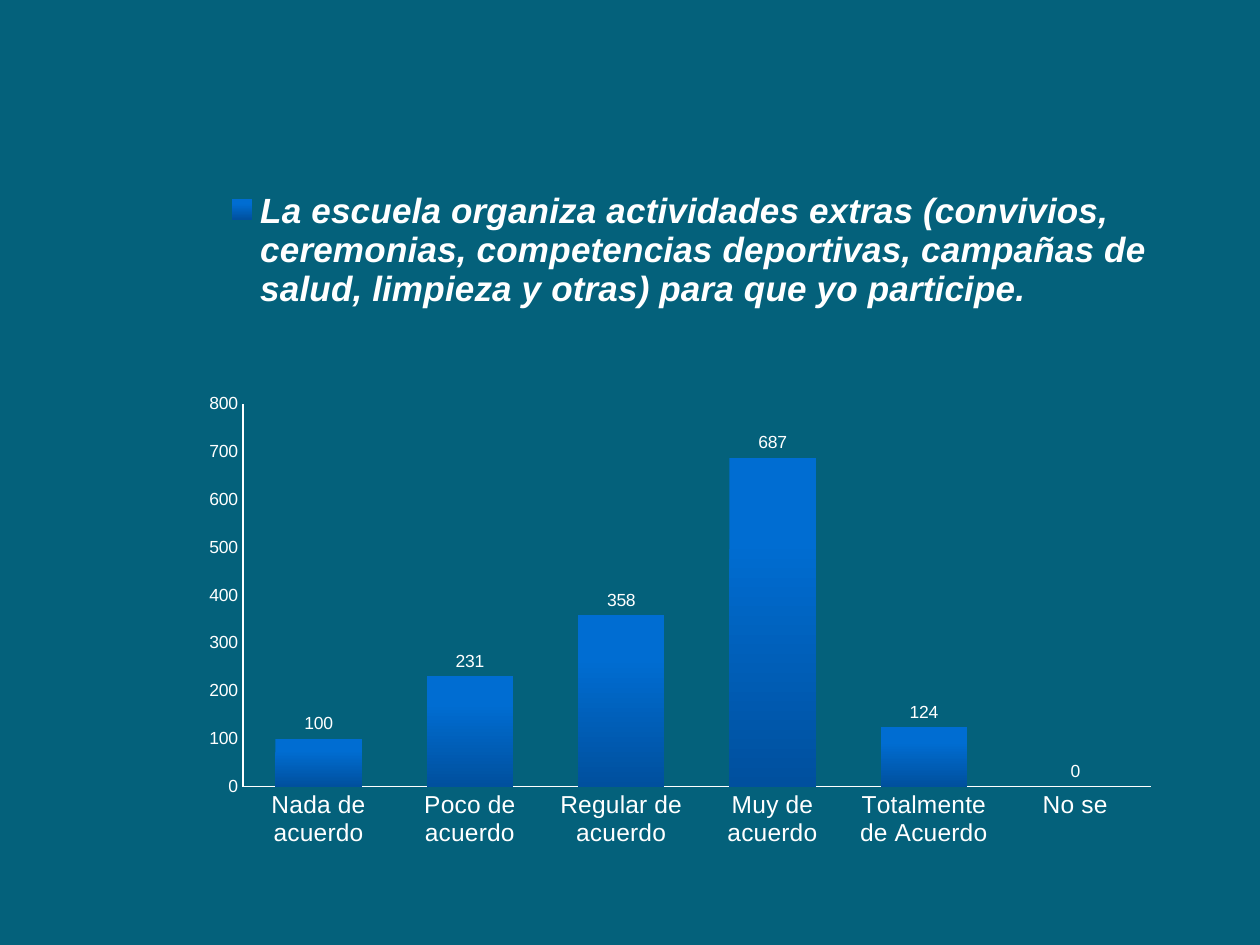
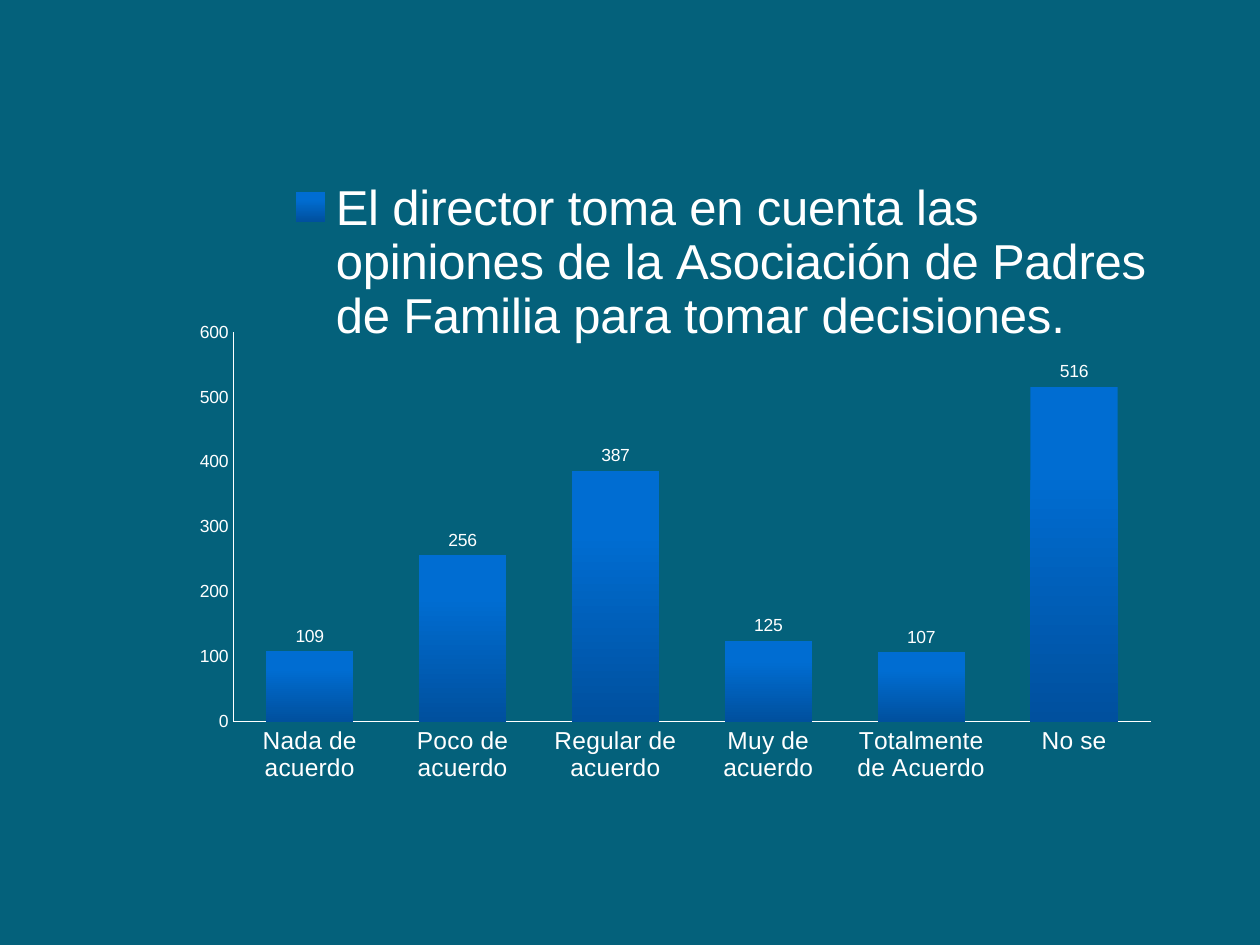
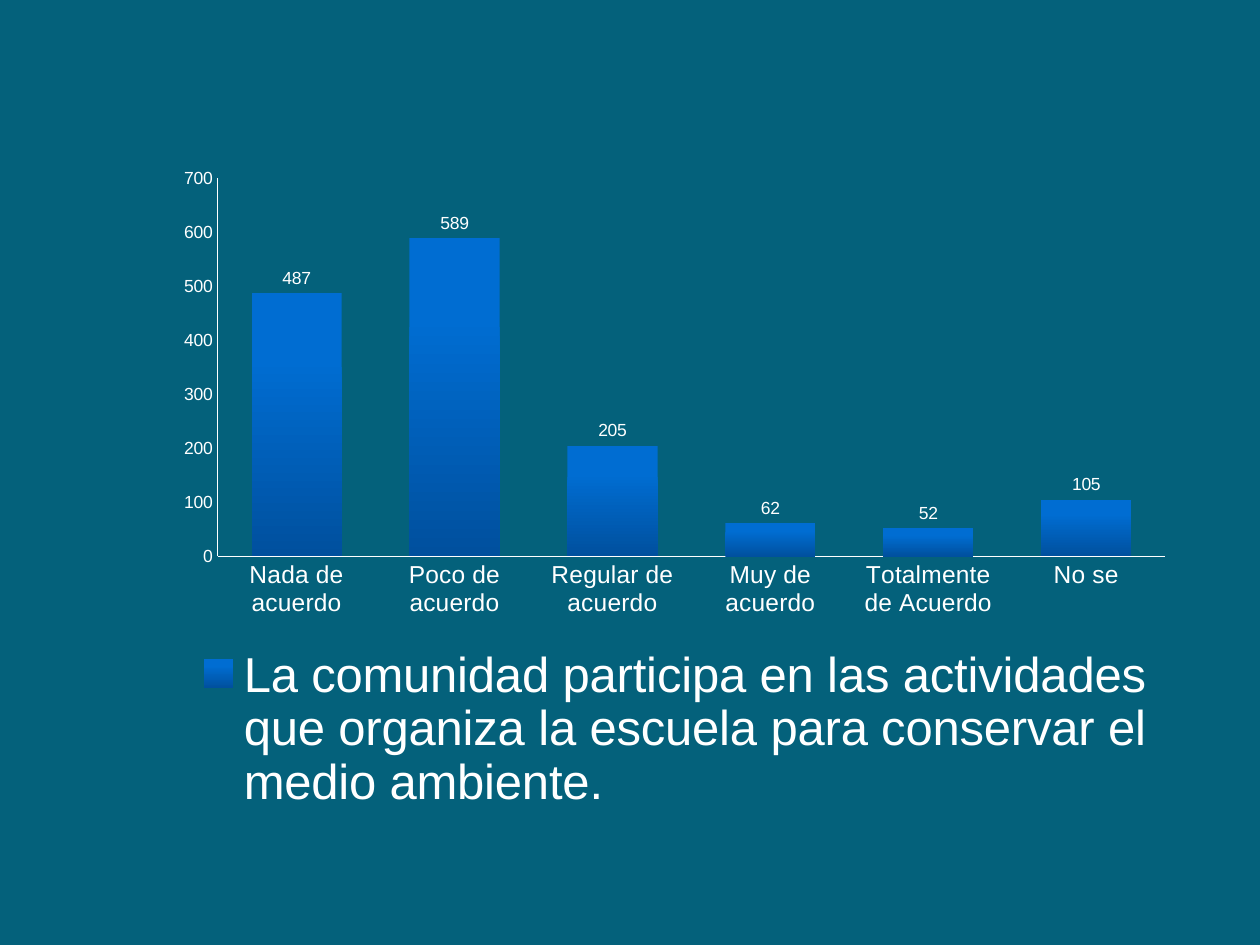
from dataclasses import dataclass

from lxml.etree import SubElement, Element
from pptx import Presentation
from pptx.chart.data import CategoryChartData as ChartData
from pptx.dml.color import RGBColor as Color
from pptx.enum.chart import XL_CHART_TYPE as ChartType
from pptx.enum.chart import XL_LABEL_POSITION as LabelPosition
from pptx.enum.chart import XL_LEGEND_POSITION as LegendPosition
from pptx.enum.chart import XL_TICK_MARK as TickMark
from pptx.oxml.ns import qn
from pptx.util import Inches, Pt


@dataclass(frozen=True)
class Theme:
    font: str = "Arial"
    background: Color = Color.from_string("04617B")
    text: Color = Color.from_string("FFFFFF")
    bar_top: Color = Color.from_string("006DD2")
    bar_bottom: Color = Color.from_string("00509E")
    value_size: int = 10
    category_size: int = 14
    legend_size: int = 28
    emphasis_size: int = 20
    axis_width: float = 0.75


ANSWERS = (
    "Nada de acuerdo",
    "Poco de acuerdo",
    "Regular de acuerdo",
    "Muy de acuerdo",
    "Totalmente de Acuerdo",
    "No se",
)

QUESTIONS = (
    dict(
        question="La escuela organiza actividades extras (convivios, ceremonias, "
        "competencias deportivas, campañas de salud, limpieza y otras) "
        "para que yo participe.",
        votes=(100, 231, 358, 687, 124, 0),
        frame=(1.46, 1.23, 7.8, 5.59),
        plot_area=(0.06, 0.353, 0.924, 0.544),
        legend_area=(0.044, 0.041, 0.94, 0.19),
        emphasis=True,
    ),
    dict(
        question="El director toma en cuenta las opiniones de la Asociación "
        "de Padres de Familia para tomar decisiones.",
        votes=(109, 256, 387, 125, 107, 516),
        frame=(1.38, 1.15, 7.87, 5.35),
        plot_area=(0.06, 0.278, 0.925, 0.578),
        legend_area=(0.109, 0.042, 0.885, 0.267),
    ),
    dict(
        question="La comunidad participa en las actividades que organiza "
        "la escuela para conservar el medio ambiente.",
        votes=(487, 589, 205, 62, 52, 105),
        frame=(1.3, 1.23, 8.11, 5.28),
    ),
)


def manual_layout(area, inner=False):
    layout = Element(qn("c:layout"))
    manual = SubElement(layout, qn("c:manualLayout"))
    settings = [("layoutTarget", "inner")] if inner else []
    settings += [("xMode", "edge"), ("yMode", "edge")]
    settings += zip("xywh", area)
    for name, value in settings:
        SubElement(manual, qn(f"c:{name}")).set("val", str(value))
    return layout


class SurveyDeck:
    def __init__(self, theme):
        self.theme = theme
        self.deck = Presentation()
        self.deck.slide_width = Inches(10)
        self.deck.slide_height = Inches(7.5)
        self.page = None

    def add_page(self):
        self.page = self.deck.slides.add_slide(self.deck.slide_layouts[6])
        fill = self.page.background.fill
        fill.solid()
        fill.fore_color.rgb = self.theme.background

    def style_font(self, font, size, bold=False, italic=False):
        font.name = self.theme.font
        font.size = Pt(size)
        font.bold = bold
        font.italic = italic
        font.color.rgb = self.theme.text

    def style_axis(self, axis, size):
        axis.has_major_gridlines = False
        axis.major_tick_mark = TickMark.NONE
        axis.minor_tick_mark = TickMark.NONE
        axis.format.line.color.rgb = self.theme.text
        axis.format.line.width = Pt(self.theme.axis_width)
        self.style_font(axis.tick_labels.font, size)

    def style_bars(self, plot):
        plot.gap_width = 75
        plot.vary_by_categories = False
        fill = plot.series[0].format.fill
        fill.gradient()
        fill.gradient_angle = 270
        top, bottom = fill.gradient_stops
        top.color.rgb, top.position = self.theme.bar_top, 0.25
        bottom.color.rgb, bottom.position = self.theme.bar_bottom, 1
        plot.has_data_labels = True
        labels = plot.data_labels
        labels.show_value = True
        labels.position = LabelPosition.OUTSIDE_END
        self.style_font(labels.font, self.theme.value_size)

    def add_legend(self, chart, area, emphasis):
        chart.has_legend = True
        legend = chart.legend
        legend.position = LegendPosition.BOTTOM
        legend.include_in_layout = False
        size = self.theme.emphasis_size if emphasis else self.theme.legend_size
        self.style_font(legend.font, size, bold=emphasis, italic=emphasis)
        if area:
            position = legend._element.find(qn("c:legendPos"))
            position.addnext(manual_layout(area))

    def add_bar_chart(self, question, votes, frame, plot_area=None,
                      legend_area=None, emphasis=False):
        data = ChartData()
        data.categories = ANSWERS
        data.add_series(question, votes)
        chart = self.page.shapes.add_chart(
            ChartType.COLUMN_CLUSTERED, *map(Inches, frame), data
        ).chart
        chart.has_title = False
        self.style_font(chart.font, self.theme.value_size)
        self.style_axis(chart.category_axis, self.theme.category_size)
        self.style_axis(chart.value_axis, self.theme.value_size)
        self.style_bars(chart.plots[0])
        self.add_legend(chart, legend_area, emphasis)
        if plot_area:
            plot = chart._chartSpace.chart.plotArea
            for layout in plot.findall(qn("c:layout")):
                plot.remove(layout)
            plot.insert(0, manual_layout(plot_area, inner=True))


def main():
    survey = SurveyDeck(Theme())
    for question in QUESTIONS:
        survey.add_page()
        survey.add_bar_chart(**question)
    survey.deck.save("out.pptx")


if __name__ == "__main__":
    main()
